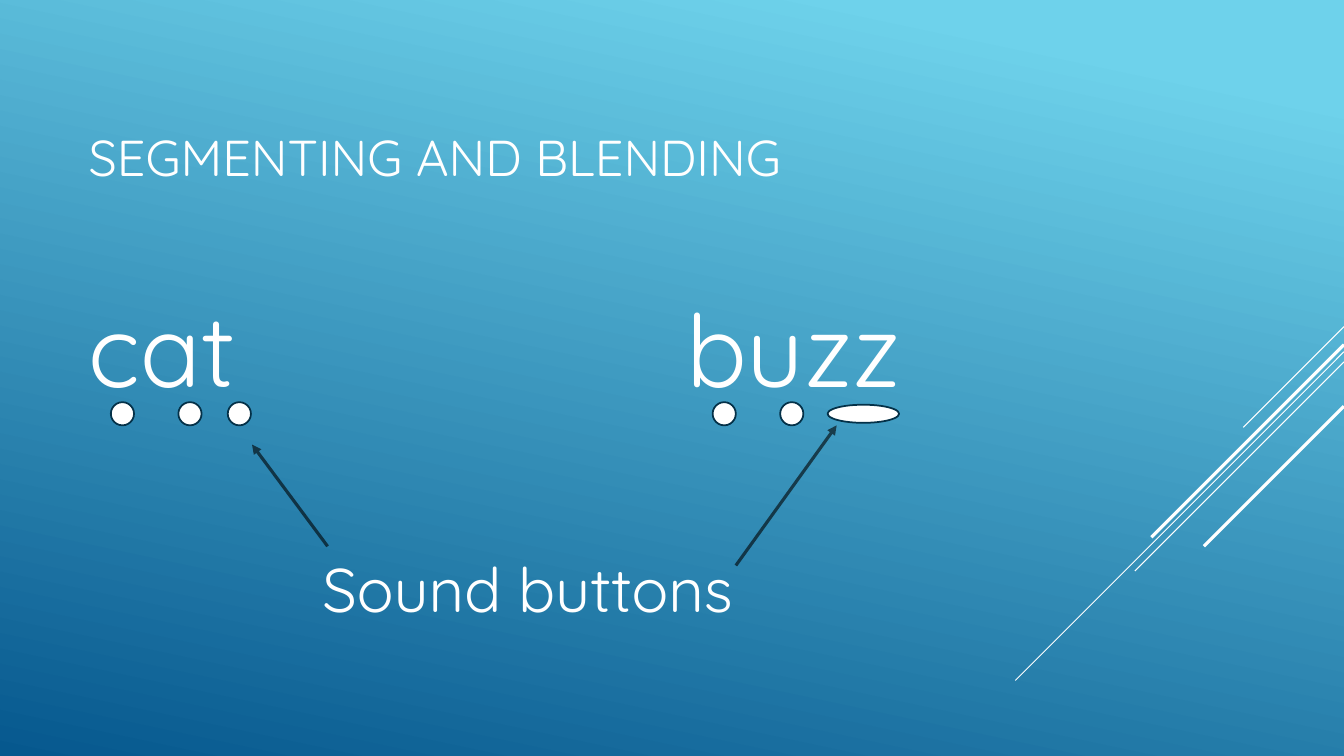
from dataclasses import dataclass

from lxml.etree import SubElement
from pptx import Presentation
from pptx.dml.color import RGBColor
from pptx.enum.shapes import MSO_CONNECTOR, MSO_SHAPE
from pptx.enum.text import MSO_ANCHOR, MSO_AUTO_SIZE, PP_ALIGN
from pptx.oxml.ns import qn
from pptx.shapes.connector import Connector
from pptx.slide import Slide
from pptx.text.text import TextFrame
from pptx.util import Inches, Pt

CELL = Inches(0.1)
COLUMNS, ROWS = 133.33, 75

WHITE = RGBColor(0xFF, 0xFF, 0xFF)
BLACK = RGBColor(0x00, 0x00, 0x00)
NAVY = RGBColor(0x04, 0x31, 0x48)
SKY = RGBColor(0x6E, 0xD2, 0xEB)
OCEAN = RGBColor(0x06, 0x58, 0x8E)

FONT = "Quicksand"
BUTTON_MIDDLE = 41.05


@dataclass(frozen=True)
class Label:
    text: str
    column: float
    row: float
    width: float
    height: float
    size: int


@dataclass(frozen=True)
class Button:
    column: float
    width: float = 2.3
    height: float = 2.3


@dataclass(frozen=True)
class Streak:
    row: float
    length: float
    weight: float


@dataclass(frozen=True)
class Arrow:
    start: tuple[float, float]
    end: tuple[float, float]


TITLE = Label("SEGMENTING AND BLENDING", 7.8, 7.3, 93.3, 16.5, 36)
LABELS = [
    Label("cat", 7.8, 27.9, 22.2, 13.1, 72),
    Label("buzz", 67.1, 27.9, 30.3, 13.1, 72),
    Label("Sound buttons", 31, 54.2, 52, 8.4, 44),
]
BUTTONS = [
    Button(70.7), Button(77.4), Button(82.1, 7.1, 1.8),
    Button(11), Button(17.7), Button(22.6),
]
STREAKS = [
    Streak(32.4, 10, 0.75),
    Streak(34.9, 32.6, 0.75),
    Streak(35.9, 20.75, 0.75),
    Streak(34.2, 19.1, 2.25),
    Streak(40.3, 13.9, 2.25),
]
ARROWS = [
    Arrow((32.5, 54.2), (25, 44.1)),
    Arrow((73, 56.1), (83, 42.2)),
]


def cells(*counts: float) -> list[int]:
    return [round(count * CELL) for count in counts]


def apply(target: object, values: dict[str, object]) -> None:
    for name, value in values.items():
        setattr(target, name, value)


def write(frame: TextFrame, label: Label, layout: dict[str, object]) -> None:
    apply(frame, {"word_wrap": True, **layout})
    para = frame.paragraphs[0]
    para.alignment = PP_ALIGN.LEFT
    span = para.add_run()
    span.text = label.text
    apply(span.font, {"name": FONT, "size": Pt(label.size)})
    span.font.color.rgb = WHITE


def paint_background(page: Slide) -> None:
    fill = page.background.fill
    fill.gradient()
    fill.gradient_angle = 258
    for stop, position, color in zip(fill.gradient_stops, (0.1, 1), (SKY, OCEAN)):
        stop.position = position
        stop.color.rgb = color


def add_title(page: Slide) -> None:
    title = page.shapes.title
    places = cells(TITLE.column, TITLE.row, TITLE.width, TITLE.height)
    apply(title, dict(zip(("left", "top", "width", "height"), places)))
    write(title.text_frame, TITLE, {
        "auto_size": MSO_AUTO_SIZE.NONE,
        "vertical_anchor": MSO_ANCHOR.MIDDLE,
    })


def add_label(page: Slide, label: Label) -> None:
    box = page.shapes.add_textbox(
        *cells(label.column, label.row, label.width, label.height))
    write(box.text_frame, label, {"auto_size": MSO_AUTO_SIZE.SHAPE_TO_FIT_TEXT})


def add_button(page: Slide, button: Button) -> None:
    top = BUTTON_MIDDLE - button.height / 2
    oval = page.shapes.add_shape(
        MSO_SHAPE.OVAL, *cells(button.column, top, button.width, button.height))
    oval.shadow.inherit = False
    oval.fill.solid()
    oval.fill.fore_color.rgb = WHITE
    oval.line.color.rgb = NAVY
    oval.line.width = Pt(1.25)


def add_line(page: Slide, start: tuple[float, float], end: tuple[float, float],
             color: RGBColor, weight: float) -> Connector:
    line = page.shapes.add_connector(MSO_CONNECTOR.STRAIGHT, *cells(*start, *end))
    line.line.color.rgb = color
    line.line.width = Pt(weight)
    SubElement(line._element.spPr, qn("a:effectLst"))
    return line


def add_streak(page: Slide, streak: Streak) -> None:
    end = (COLUMNS - streak.length, streak.row + streak.length)
    add_line(page, (COLUMNS, streak.row), end, WHITE, streak.weight)


def add_arrow(page: Slide, arrow: Arrow) -> None:
    line = add_line(page, arrow.start, arrow.end, BLACK, 2.25)
    outline = line._element.spPr.find(qn("a:ln"))
    color = outline.find(qn("a:solidFill")).find(qn("a:srgbClr"))
    SubElement(color, qn("a:alpha"), val="60000")
    SubElement(outline, qn("a:tailEnd"), type="triangle")


def main() -> None:
    deck = Presentation()
    deck.slide_width, deck.slide_height = cells(COLUMNS, ROWS)
    page = deck.slides.add_slide(deck.slide_layouts[5])
    paint_background(page)
    for streak in STREAKS:
        add_streak(page, streak)
    add_title(page)
    for label in LABELS:
        add_label(page, label)
    for button in BUTTONS:
        add_button(page, button)
    for arrow in ARROWS:
        add_arrow(page, arrow)
    deck.save("out.pptx")


if __name__ == "__main__":
    main()
